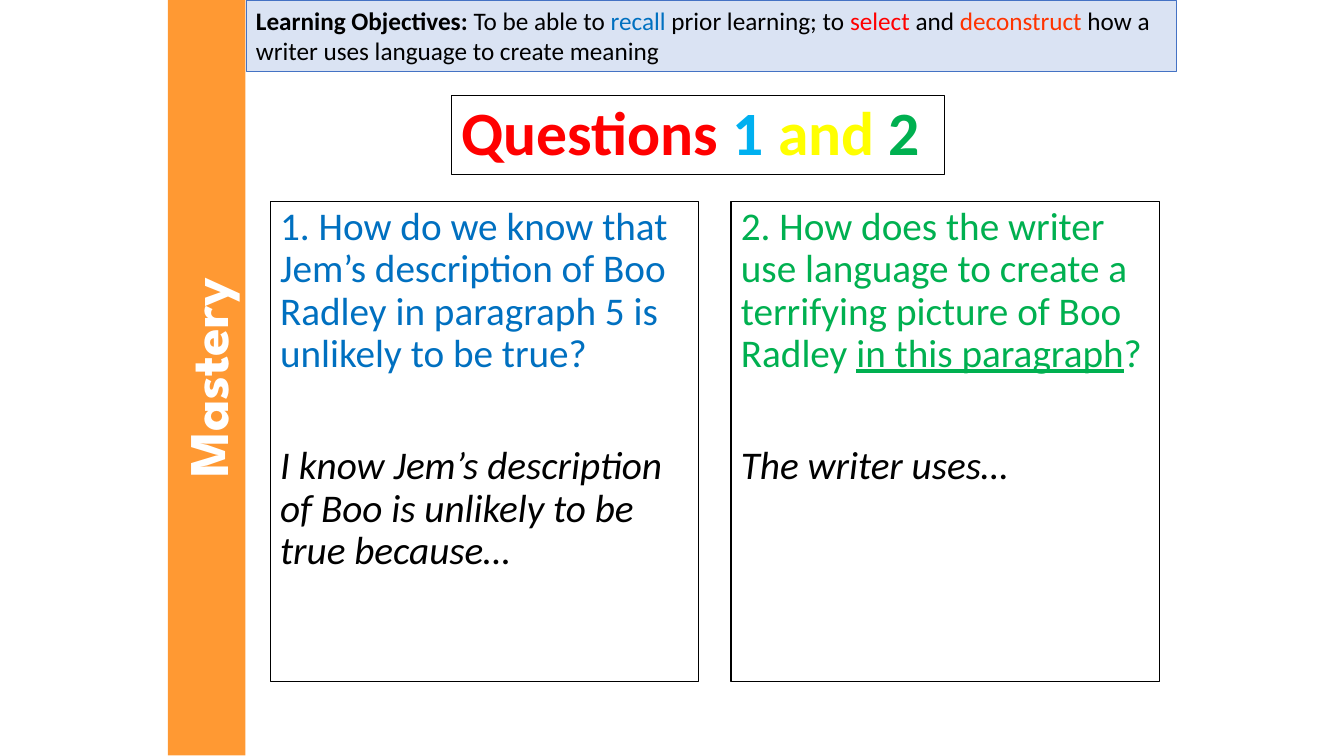
from pptx import Presentation
from pptx.dml.color import RGBColor
from pptx.enum.shapes import MSO_SHAPE
from pptx.enum.text import MSO_ANCHOR, PP_ALIGN
from pptx.util import Inches, Pt

BLACK = RGBColor(0x00, 0x00, 0x00)
WHITE = RGBColor(0xFF, 0xFF, 0xFF)
RED = RGBColor(0xFF, 0x00, 0x00)
SKY = RGBColor(0x00, 0xB0, 0xF0)
YELLOW = RGBColor(0xFF, 0xFF, 0x00)
GREEN = RGBColor(0x00, 0xB0, 0x50)
BLUE = RGBColor(0x00, 0x70, 0xC0)
SCARLET = RGBColor(0xFF, 0x33, 0x00)
ORANGE = RGBColor(0xFF, 0x99, 0x33)
PALE = RGBColor(0xDA, 0xE3, 0xF3)
EDGE = RGBColor(0x44, 0x72, 0xC4)


class Deck:
    font = "Calibri"

    def __init__(self):
        self.prs = Presentation()
        self.prs.slide_width = Inches(13.33)
        self.prs.slide_height = Inches(7.5)
        self.slide = self.prs.slides.add_slide(self.prs.slide_layouts[6])

    def box(self, left, top, width, height, fill, line=None, weight=1,
            anchor=MSO_ANCHOR.TOP):
        """Draw a plain rectangle ready for text."""
        shape = self.slide.shapes.add_shape(
            MSO_SHAPE.RECTANGLE, Inches(left), Inches(top),
            Inches(width), Inches(height))
        shape.shadow.inherit = False
        shape.fill.solid()
        shape.fill.fore_color.rgb = fill
        if line is None:
            shape.line.fill.background()
        else:
            shape.line.color.rgb = line
            shape.line.width = Pt(weight)
        shape.text_frame.word_wrap = True
        shape.text_frame.vertical_anchor = anchor
        return shape

    def text(self, shape, paras, size, font=None, align=PP_ALIGN.LEFT,
             spacing=1.0, gap=0):
        """Each paragraph is a list of (words, colour, marks)."""
        frame = shape.text_frame
        for i, runs in enumerate(paras):
            para = frame.add_paragraph() if i else frame.paragraphs[0]
            para.alignment = align
            para.line_spacing = spacing
            para.space_before = Pt(gap if i else 0)
            for words, color, marks in runs:
                run = para.add_run()
                run.text = words
                run.font.name = font or self.font
                run.font.size = Pt(size)
                run.font.color.rgb = color
                run.font.bold = "b" in marks
                run.font.italic = "i" in marks
                run.font.underline = "u" in marks


def main():
    deck = Deck()

    # Title
    title = deck.box(4.48, 0.95, 4.89, 0.78, WHITE, BLACK,
                     anchor=MSO_ANCHOR.MIDDLE)
    deck.text(title, [[("Questions ", RED, "b"), ("1 ", SKY, "b"),
                       ("and ", YELLOW, "b"), ("2", GREEN, "b")]],
              44, spacing=0.9)

    # Question panels
    panels = [
        ([("1. How do we know that Jem’s description of Boo Radley in "
           "paragraph 5 is unlikely to be true?", BLUE, "")],
         "I know Jem’s description of Boo is unlikely to be true because…"),
        ([("2. How does the writer use language to create a terrifying "
           "picture of Boo Radley ", GREEN, ""),
          ("in this paragraph", GREEN, "u"), ("?", GREEN, "")],
         "The writer uses…"),
    ]
    for i, (ask, start) in enumerate(panels):
        panel = deck.box(2.68 + i * 4.57, 2, 4.25, 4.76, WHITE, BLACK)
        deck.text(panel, [ask, [(start, BLACK, "i")]], 28,
                  spacing=0.9, gap=50)

    # Learning objectives
    goals = deck.box(2.44, 0, 9.23, 0.71, PALE, EDGE, 0.5)
    deck.text(goals, [[
        ("Learning Objectives: ", BLACK, "b"),
        ("To be able to ", BLACK, ""),
        ("recall ", BLUE, ""),
        ("prior learning; to ", BLACK, ""),
        ("select ", RED, ""),
        ("and ", BLACK, ""),
        ("deconstruct ", SCARLET, ""),
        ("how a writer uses language to create meaning", BLACK, ""),
    ]], 18)

    # Side band
    band = deck.box(-1.7, 3.36, 7.5, 0.77, ORANGE)
    band.rotation = 270
    deck.text(band, [[("Mastery", WHITE, "b")]], 40,
              font="League Spartan", align=PP_ALIGN.CENTER)

    deck.prs.save("out.pptx")


if __name__ == "__main__":
    main()
